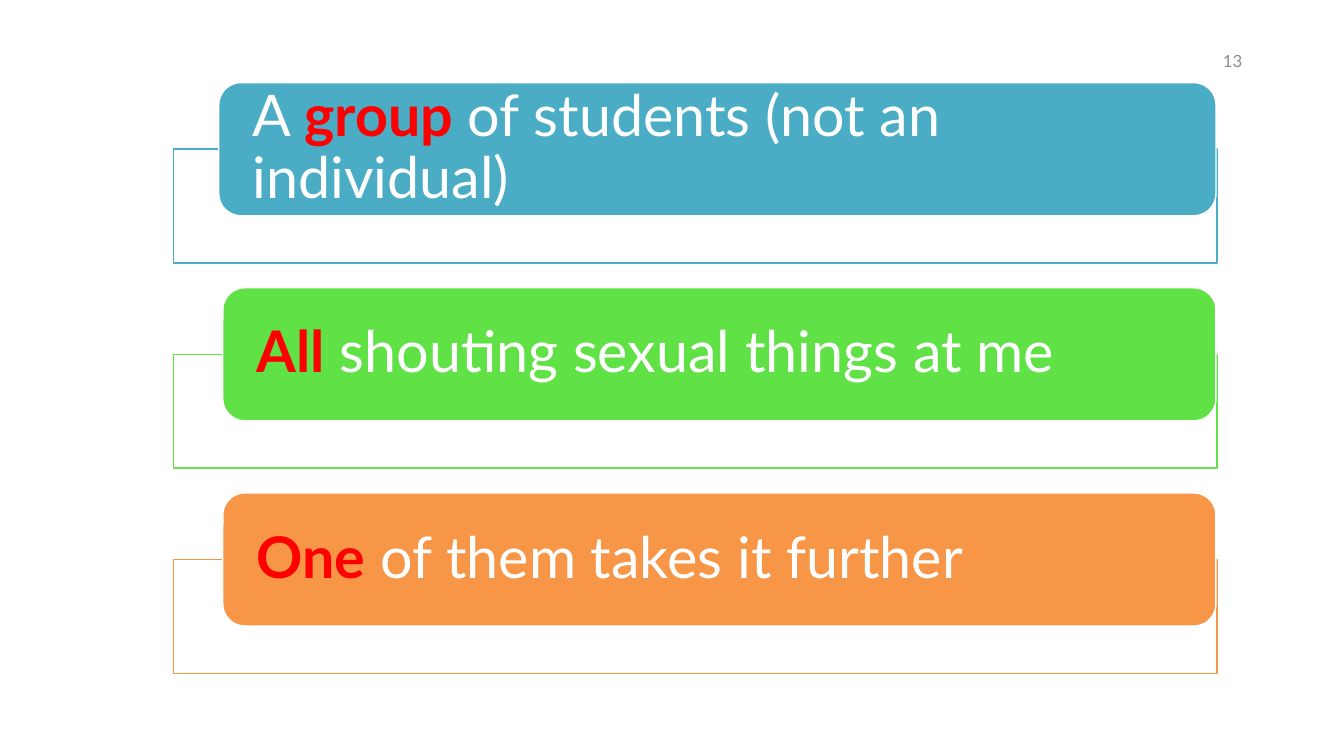
from lxml import etree
from pptx import Presentation
from pptx.dml.color import RGBColor
from pptx.enum import shapes, text
from pptx.oxml.ns import qn
from pptx.util import Inches, Pt

COLORS = {"white": "FFFFFF", "red": "FF0000", "teal": "4BACC6",
          "green": "60E146", "orange": "F79646", "gray": "8C8C8C"}
FONT = "Lato"

prs = Presentation()
prs.slide_width, prs.slide_height = Inches(13.33), Inches(7.5)
s = prs.slides.add_slide(prs.slide_layouts[6])


def add_box(kind, left, top, width, height, fill, line):
    sp = s.shapes.add_shape(kind, Inches(left), Inches(top), Inches(width), Inches(height))
    sp.shadow.inherit = False
    sp.fill.solid()
    sp.fill.fore_color.rgb = RGBColor.from_string(COLORS[fill])
    sp.line.color.rgb = RGBColor.from_string(COLORS[line])
    sp.line.width = Pt(1)
    return sp


def add_text(left, top, width, height, inset, runs, size):
    tf = s.shapes.add_textbox(Inches(left), Inches(top), Inches(width), Inches(height)).text_frame
    tf.word_wrap = True
    tf.vertical_anchor = text.MSO_ANCHOR.MIDDLE
    tf.margin_left = tf.margin_right = Inches(inset)
    tf.margin_top = tf.margin_bottom = 0
    p = tf.paragraphs[0]
    for words, color, bold in runs:
        r = p.add_run()
        r.text = words
        r.font.name, r.font.size, r.font.bold = FONT, Pt(size), bold
        r.font.color.rgb = RGBColor.from_string(COLORS[color])
    return p


rows = [
    ("teal", 2.17, [("A ", "white", False), ("group", "red", True),
                    (" of students (not an individual)", "white", False)]),
    ("green", 2.21, [("All", "red", True), (" shouting sexual things at me", "white", False)]),
    ("orange", 2.21, [("One", "red", True), (" of them takes it further", "white", False)]),
]
first_top, pitch, right = 0.82, 2.035, 12.06
bar_height, pad = 1.32, 0.065

for i, (color, left, runs) in enumerate(rows):
    top = first_top + i * pitch
    width = right - left
    frame = add_box(shapes.MSO_SHAPE.RECTANGLE, 1.72, top + bar_height / 2, 10.35, 1.13,
                    "white", color)
    tint = frame.fill._xPr.find(qn("a:solidFill"))[0]
    etree.SubElement(tint, qn("a:alpha"), val="90000")
    add_box(shapes.MSO_SHAPE.ROUNDED_RECTANGLE, left, top, width, bar_height, color, "white")
    p = add_text(left + pad, top + pad, width - 2 * pad, bar_height - 2 * pad, 0.27, runs, 41)
    p.line_spacing = 0.9

p = add_text(9.42, 0.4, 3, 0.4, 0.1, [("13", "gray", False)], 12)
p.alignment = text.PP_ALIGN.RIGHT

prs.save("out.pptx")
